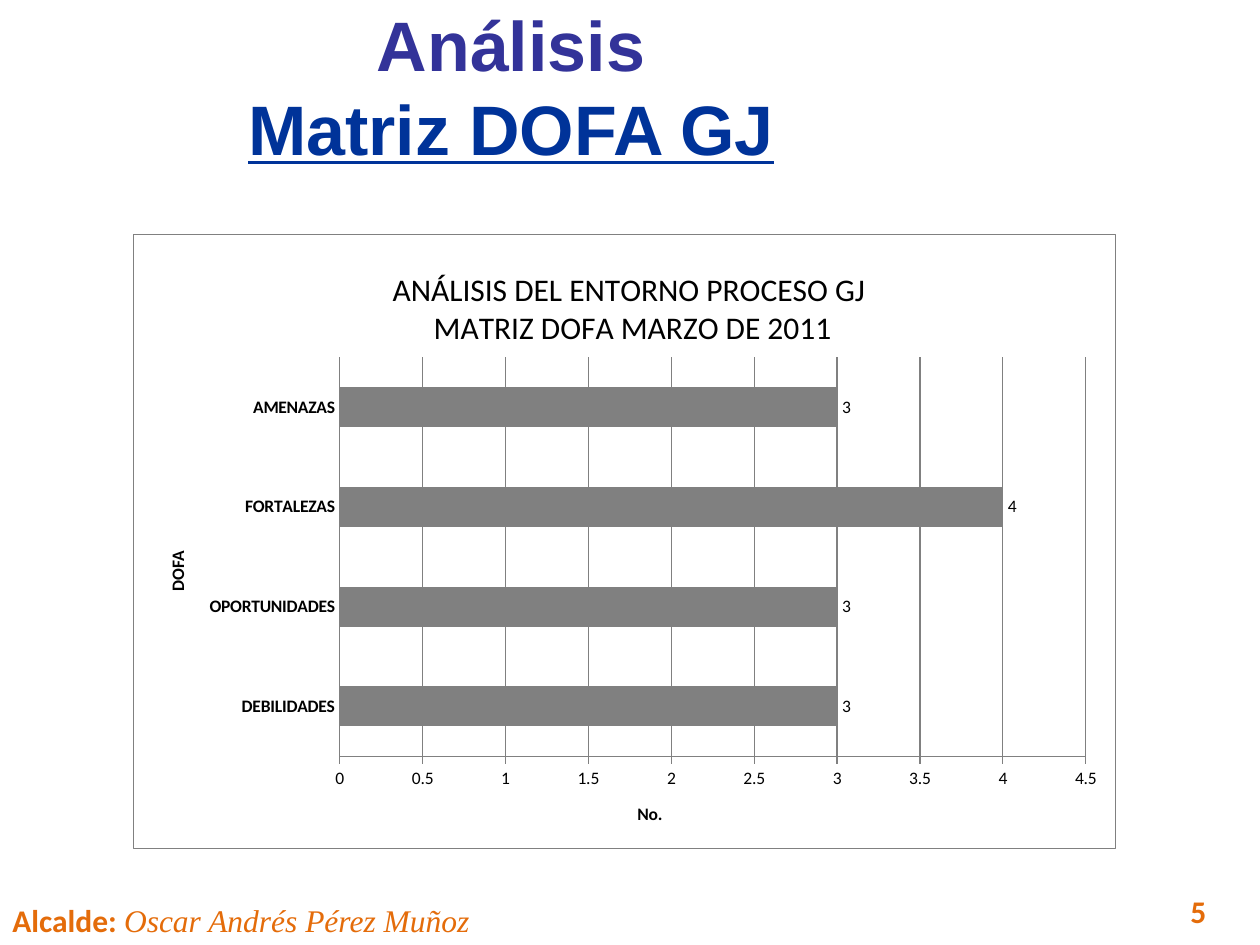
from dataclasses import dataclass

import pptx
import pptx.chart.data
import pptx.dml.color
import pptx.enum.chart
import pptx.enum.text
import pptx.oxml
import pptx.oxml.ns
import pptx.util
from lxml import etree

PX_PER_INCH = 126
ORANGE = pptx.dml.color.RGBColor(0xE4, 0x6C, 0x0A)
VIOLET = pptx.dml.color.RGBColor(0x33, 0x33, 0x99)
BLUE = pptx.dml.color.RGBColor(0x00, 0x33, 0x99)
GRAY = pptx.dml.color.RGBColor(0x80, 0x80, 0x80)
BLACK = pptx.dml.color.RGBColor(0, 0, 0)
qn = pptx.oxml.ns.qn

SHADOW = (
    f'<a:effectLst {pptx.oxml.ns.nsdecls("a")}>'
    '<a:outerShdw blurRad="50800" dist="38100" dir="5400000">'
    '<a:srgbClr val="000000"><a:alpha val="40000"/></a:srgbClr>'
    '</a:outerShdw></a:effectLst>'
)


@dataclass
class TextRun:
    text: str
    font: str
    size: int
    color: pptx.dml.color.RGBColor
    bold: bool = True
    italic: bool = False
    underline: bool = False
    shadow: bool = False


@dataclass
class TextBox:
    box: tuple[int, int, int, int]
    lines: list[list[TextRun]]
    centered: bool = False
    wrap: bool = False


def px(length: int) -> pptx.util.Emu:
    return pptx.util.Emu(round(length * pptx.util.Inches(1) / PX_PER_INCH))


def draw_text(slide, item: TextBox) -> None:
    shape = slide.shapes.add_textbox(*map(px, item.box))
    frame = shape.text_frame
    frame.word_wrap = item.wrap
    if item.centered:
        frame.vertical_anchor = pptx.enum.text.MSO_ANCHOR.MIDDLE
    for index, line in enumerate(item.lines):
        paragraph = frame.add_paragraph() if index else frame.paragraphs[0]
        if item.centered:
            paragraph.alignment = pptx.enum.text.PP_ALIGN.CENTER
        for part in line:
            run = paragraph.add_run()
            run.text = part.text
            font = run.font
            font.name, font.size = part.font, pptx.util.Pt(part.size)
            font.bold, font.italic = part.bold, part.italic
            font.underline = part.underline
            font.color.rgb = part.color
            if part.shadow:
                fill = run._r.rPr.find(qn("a:solidFill"))
                fill.addnext(pptx.oxml.parse_xml(SHADOW))


def style_font(font, size: int, bold: bool = False) -> None:
    font.name, font.size, font.bold = "Calibri", pptx.util.Pt(size), bold
    font.color.rgb = BLACK


def place(parent, position: int, **values: float) -> None:
    """Give a chart part a manual layout, in fractions of the chart."""
    for old in parent.findall(qn("c:layout")):
        parent.remove(old)
    layout = etree.Element(qn("c:layout"))
    manual = etree.SubElement(layout, qn("c:manualLayout"))
    settings = {"xMode": "edge", "yMode": "edge", **values}
    if "w" in values:
        settings = {"layoutTarget": "inner", **settings}
    for name, value in settings.items():
        etree.SubElement(manual, qn(f"c:{name}")).set("val", str(value))
    parent.insert(position, layout)


def set_title(owner, text: str, size: int, bold: bool, x: float, y: float) -> None:
    title = owner.chart_title if hasattr(owner, "chart_title") else owner.axis_title
    title.text_frame.text = text
    for paragraph in title.text_frame.paragraphs:
        style_font(paragraph.font, size, bold)
    element = title._element
    place(element, 1, x=x, y=y)


def draw_chart(slide) -> None:
    data = pptx.chart.data.CategoryChartData()
    data.categories = ["DEBILIDADES", "OPORTUNIDADES", "FORTALEZAS", "AMENAZAS"]
    data.add_series("Series 1", [3, 3, 4, 3])
    chart = slide.shapes.add_chart(
        pptx.enum.chart.XL_CHART_TYPE.BAR_CLUSTERED,
        px(133), px(234), px(983), px(615), data,
    ).chart
    style_font(chart.font, 10)
    chart.has_legend = False
    set_title(chart, "ANÁLISIS DEL ENTORNO PROCESO GJ \nMATRIZ DOFA MARZO DE 2011",
              18, False, 0.26, 0.05)

    # Bars and their values
    plot = chart.plots[0]
    plot.gap_width = 150
    plot.vary_by_categories = False
    series = plot.series[0]
    series.format.fill.solid()
    series.format.fill.fore_color.rgb = GRAY
    labels = series.data_labels
    labels.show_value = True
    labels.position = pptx.enum.chart.XL_LABEL_POSITION.OUTSIDE_END
    style_font(labels.font, 10)

    # Axes
    tick = pptx.enum.chart.XL_TICK_MARK
    category_axis, value_axis = chart.category_axis, chart.value_axis
    category_axis.major_tick_mark = tick.NONE
    value_axis.major_tick_mark = tick.CROSS
    value_axis.minimum_scale, value_axis.maximum_scale = 0, 4.5
    value_axis.major_unit = 0.5
    value_axis.has_major_gridlines = True
    value_axis.tick_labels.number_format = "General"
    value_axis.tick_labels.number_format_is_linked = False
    style_font(category_axis.tick_labels.font, 10, True)
    style_font(value_axis.tick_labels.font, 10)
    for line in (category_axis.format.line, value_axis.format.line,
                 value_axis.major_gridlines.format.line):
        line.color.rgb = GRAY
        line.width = pptx.util.Pt(0.75)
    set_title(category_axis, "DOFA", 10, True, 0.03, 0.51)
    set_title(value_axis, "No.", 10, True, 0.51, 0.92)

    # Plot area, white ground and frame
    chart_element = chart.element.find(qn("c:chart"))
    plot_area = chart_element.find(qn("c:plotArea"))
    place(plot_area, 0, x=0.21, y=0.2, w=0.76, h=0.65)
    white = '<a:solidFill><a:srgbClr val="FFFFFF"/></a:solidFill>'
    properties = f'<c:spPr {pptx.oxml.ns.nsdecls("c", "a")}>{white}<a:ln%s</a:ln></c:spPr>'
    plot_area.append(pptx.oxml.parse_xml(properties % "><a:noFill/>"))
    border = f' w="9525"><a:solidFill><a:srgbClr val="{GRAY}"/></a:solidFill>'
    chart_element.addnext(pptx.oxml.parse_xml(properties % border))


TEXTS = [
    # Page number
    TextBox((1178, 886, 82, 50), [[TextRun("5", "Calibri", 18, ORANGE, shadow=True)]]),
    # Mayor's name
    TextBox((0, 895, 495, 50), [[
        TextRun("Alcalde: ", "Calibri", 18, ORANGE, shadow=True),
        TextRun("Oscar Andrés Pérez Muñoz", "Times New Roman", 18, ORANGE,
                bold=False, italic=True, shadow=True),
    ]]),
    # Slide title
    TextBox((164, 6, 694, 158), [
        [TextRun("Análisis", "Arial", 40, VIOLET)],
        [TextRun("Matriz DOFA GJ", "Arial", 40, BLUE, underline=True)],
    ], centered=True, wrap=True),
]


def main() -> None:
    presentation = pptx.Presentation()
    presentation.slide_width, presentation.slide_height = px(1260), px(945)
    slide = presentation.slides.add_slide(presentation.slide_layouts[6])
    for item in TEXTS:
        draw_text(slide, item)
    draw_chart(slide)
    presentation.save("out.pptx")


if __name__ == "__main__":
    main()
